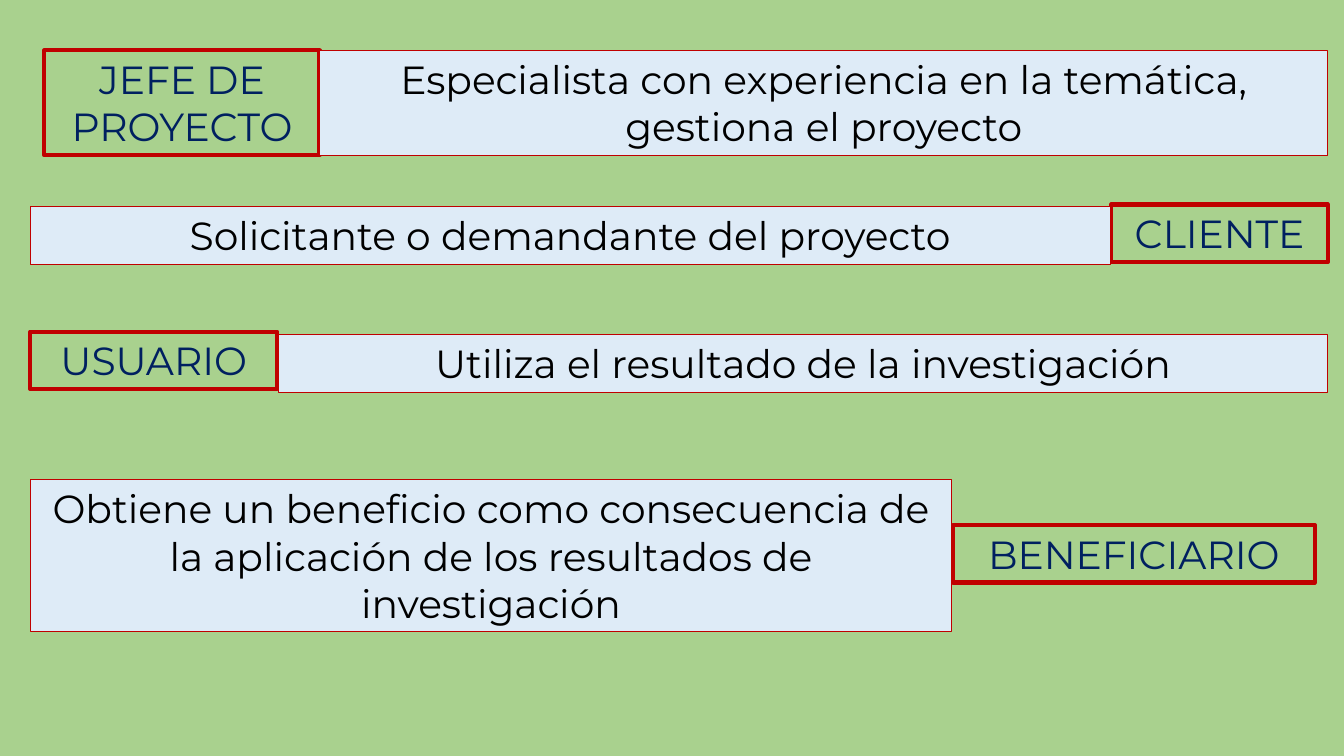
from dataclasses import dataclass
from pptx import Presentation
from pptx.dml.color import RGBColor as RGB
from pptx.enum.shapes import MSO_SHAPE as Shape
from pptx.enum.text import MSO_ANCHOR as Anchor, MSO_AUTO_SIZE as Auto, PP_ALIGN as Align
from pptx.util import Inches, Pt


@dataclass(frozen=True)
class Theme:
    font: str = "Montserrat"
    size: int = 28
    back: RGB = RGB(0xA9, 0xD1, 0x8E)
    panel: RGB = RGB(0xDE, 0xEB, 0xF7)
    edge: RGB = RGB(0xC0, 0x00, 0x00)
    navy: RGB = RGB(0x00, 0x20, 0x60)
    black: RGB = RGB(0x00, 0x00, 0x00)


THEME = Theme()
WIDE, HIGH = 13.33, 7.5

# Role, its box, meaning, its box (left, top, width, height)
ROLES = [
    ("JEFE DE PROYECTO", (0.44, 0.5, 2.73, 1.04),
     "Especialista con experiencia en la temática, gestiona el proyecto",
     (3.17, 0.5, 10, 1.04)),
    ("CLIENTE", (11.02, 2.03, 2.15, 0.57),
     "Solicitante o demandante del proyecto", (0.3, 2.05, 10.71, 0.57)),
    ("USUARIO", (0.3, 3.29, 2.45, 0.57),
     "Utiliza el resultado de la investigación", (2.76, 3.32, 10.41, 0.57)),
    ("BENEFICIARIO", (9.45, 5.21, 3.59, 0.57),
     "Obtiene un beneficio como consecuencia de la aplicación de los "
     "resultados de investigación", (0.3, 4.76, 9.14, 1.51)),
]


def add_rect(slide, box, fill=None, weight=0):
    rect = slide.shapes.add_shape(Shape.RECTANGLE, *map(Inches, box))
    rect.shadow.inherit = False
    if fill is None:
        rect.fill.background()
    else:
        rect.fill.solid()
        rect.fill.fore_color.rgb = fill
    if weight:
        rect.line.color.rgb = THEME.edge
        rect.line.width = Pt(weight)
    else:
        rect.line.fill.background()
    return rect


def write(rect, text, color):
    frame = rect.text_frame
    frame.text = text
    frame.word_wrap = True
    frame.auto_size = Auto.SHAPE_TO_FIT_TEXT
    frame.vertical_anchor = Anchor.TOP
    line = frame.paragraphs[0]
    line.alignment = Align.CENTER
    font = line.runs[0].font
    font.name = THEME.font
    font.size = Pt(THEME.size)
    font.color.rgb = color


def add_role(slide, name, tag, text, panel):
    write(add_rect(slide, tag, weight=3), name, THEME.navy)
    write(add_rect(slide, panel, THEME.panel, 0.75), text, THEME.black)


def main():
    deck = Presentation()
    deck.slide_width, deck.slide_height = Inches(WIDE), Inches(HIGH)
    slide = deck.slides.add_slide(deck.slide_layouts[6])

    # Green backdrop
    add_rect(slide, (0, 0, WIDE, HIGH), THEME.back)

    # Project roles
    for role in ROLES:
        add_role(slide, *role)

    deck.save("out.pptx")


if __name__ == "__main__":
    main()
